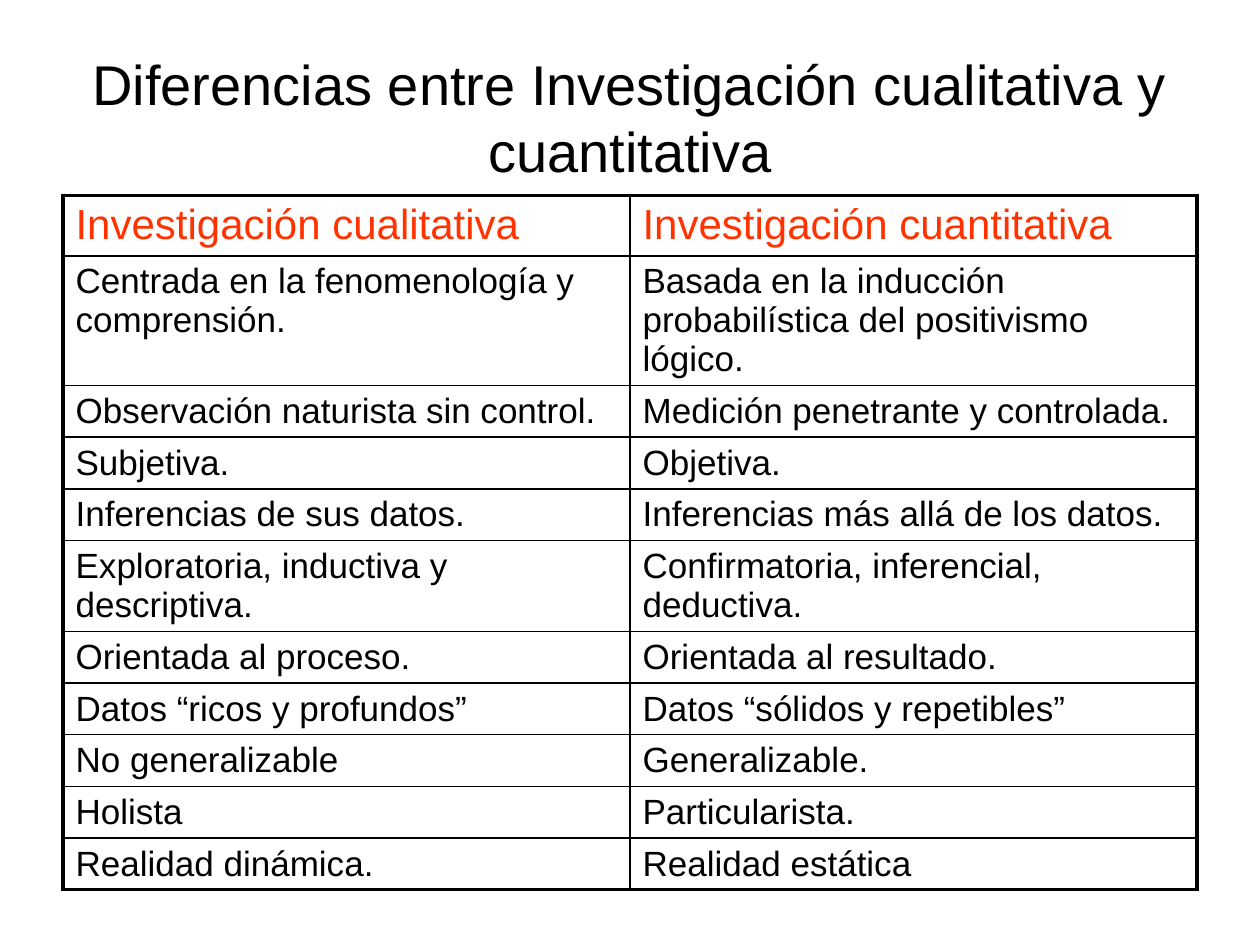
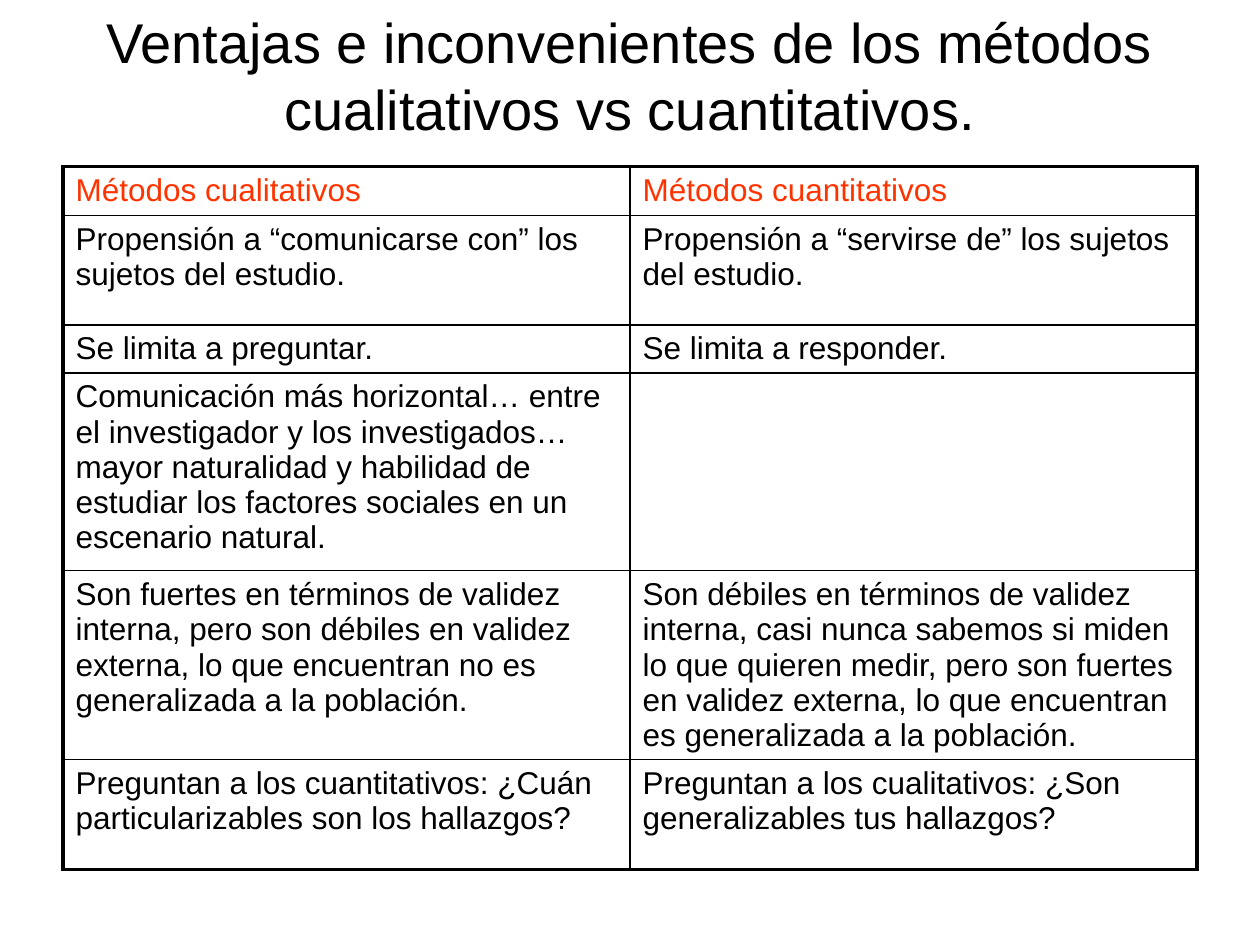
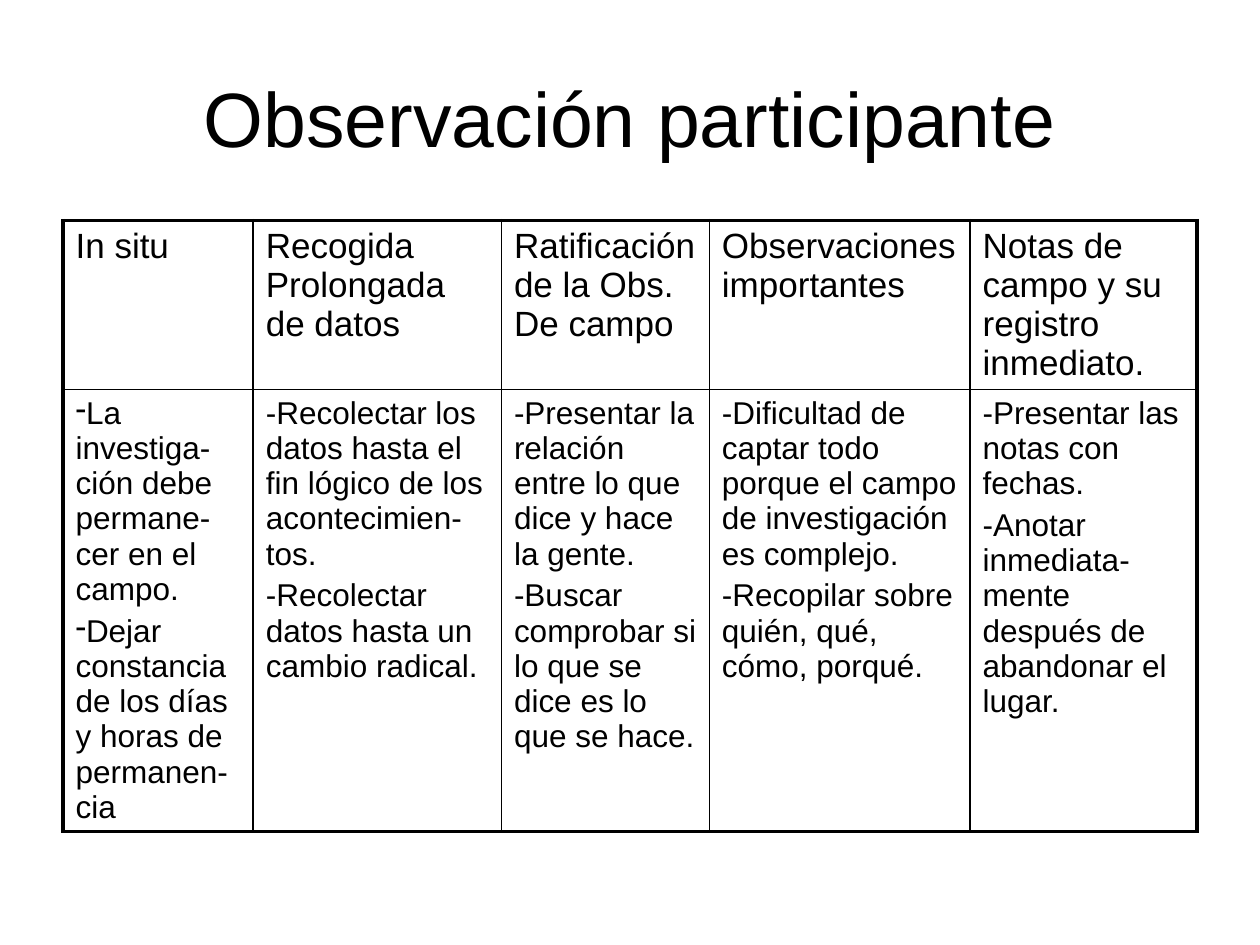
import pptx
import pptx.dml.color
import pptx.enum.text
import pptx.oxml
import pptx.util
from dataclasses import dataclass
from lxml import etree
from pptx.oxml.ns import qn


@dataclass(frozen=True)
class Theme:
    font: str = "Arial"
    ink: str = "000000"
    accent: str = "FF3300"
    outer: float = 2.25
    inner: float = 1
    gap: float = 0.2      # space before a paragraph, share of its type size
    margin: float = 0.05  # side margin, share of the slide width
    band: float = 1.25    # title height, inches


THEME = Theme()
WIDE, HIGH = 10, 7.5
SPAN = WIDE * (1 - 2 * THEME.margin)
LEFT = WIDE * THEME.margin
BULLET = "•"  # marks a paragraph that takes a dash bullet

TRAITS = [
    ("Investigación cualitativa", "Investigación cuantitativa"),
    ("Centrada en la fenomenología y comprensión.",
     "Basada en la inducción probabilística del positivismo lógico."),
    ("Observación naturista sin control.", "Medición penetrante y controlada."),
    ("Subjetiva.", "Objetiva."),
    ("Inferencias de sus datos.", "Inferencias más allá de los datos."),
    ("Exploratoria, inductiva y descriptiva.",
     "Confirmatoria, inferencial, deductiva."),
    ("Orientada al proceso.", "Orientada al resultado."),
    ("Datos “ricos y profundos”", "Datos “sólidos y repetibles”"),
    ("No generalizable", "Generalizable."),
    ("Holista", "Particularista."),
    ("Realidad dinámica.", "Realidad estática"),
]

METHODS = [
    ("Métodos cualitativos", "Métodos cuantitativos"),
    ("Propensión a “comunicarse con” los sujetos del estudio.",
     "Propensión a “servirse de” los sujetos del estudio."),
    ("Se limita a preguntar.", "Se limita a responder."),
    ("Comunicación más horizontal… entre el investigador y los investigados… "
     "mayor naturalidad y habilidad de estudiar los factores sociales en un "
     "escenario natural.", ""),
    ("Son fuertes en términos de validez interna, pero son débiles en validez "
     "externa, lo que encuentran no es generalizada a la población.",
     "Son débiles en términos de validez interna, casi nunca sabemos si miden "
     "lo que quieren medir, pero son fuertes en validez externa, lo que "
     "encuentran es generalizada a la población."),
    ("Preguntan a los cuantitativos: ¿Cuán particularizables son los hallazgos?",
     "Preguntan a los cualitativos: ¿Son generalizables tus hallazgos?"),
]

FIELD = [
    ("In situ", "Recogida Prolongada de datos", "Ratificación de la Obs. De campo",
     "Observaciones importantes", "Notas de campo y su registro inmediato."),
    ("•La investiga-ción debe permane-cer en el campo.\n"
     "•Dejar constancia de los días y horas de permanen-cia",
     "-Recolectar los datos hasta el fin lógico de los acontecimien-tos.\n"
     "-Recolectar datos hasta un cambio radical.",
     "-Presentar la relación entre lo que dice y hace la gente.\n"
     "-Buscar comprobar si lo que se dice es lo que se hace.",
     "-Dificultad de captar todo porque el campo de investigación es complejo.\n"
     "-Recopilar sobre quién, qué, cómo, porqué.",
     "-Presentar las notas con fechas.\n"
     "-Anotar inmediata-mente después de abandonar el lugar."),
]


def inch(size):
    return pptx.util.Inches(size)


def write(para, text, size, color):
    """Add one formatted run to a paragraph."""
    run = para.add_run()
    run.text = text
    run.font.name = THEME.font
    run.font.size = pptx.util.Pt(size)
    run.font.color.rgb = pptx.dml.color.RGBColor.from_string(color)


def dash(para):
    """Give a paragraph a dash bullet without indent."""
    props = para._p.get_or_add_pPr()
    props.set("marL", "0")
    props.set("indent", "0")
    etree.SubElement(props, qn("a:buFontTx"))
    etree.SubElement(props, qn("a:buChar")).set("char", "-")


def rule(cell, edges):
    """Draw the cell borders; edges maps a side to a width in points."""
    props = cell._tc.get_or_add_tcPr()
    for spot, side in enumerate("LRTB"):
        line = etree.Element(qn(f"a:ln{side}"))
        line.set("w", str(int(pptx.util.Pt(edges[side]))))
        fill = etree.SubElement(line, qn("a:solidFill"))
        etree.SubElement(fill, qn("a:srgbClr")).set("val", THEME.ink)
        props.insert(spot, line)


def fill_cell(cell, text, size, color):
    """Write the paragraphs of one cell."""
    cell.fill.background()
    frame = cell.text_frame
    for spot, part in enumerate(text.split("\n") if text else []):
        para = frame.add_paragraph() if spot else frame.paragraphs[0]
        para.space_before = pptx.util.Pt(size * THEME.gap)
        if part.startswith(BULLET):
            dash(para)
        write(para, part.removeprefix(BULLET), size, color)


def add_page(deck, text, size, top):
    """Add a slide with its title."""
    page = deck.slides.add_slide(deck.slide_layouts[5])
    title = page.shapes.title
    title.left, title.top = inch(LEFT), inch(top)
    title.width, title.height = inch(SPAN), inch(THEME.band)
    frame = title.text_frame
    frame.auto_size = pptx.enum.text.MSO_AUTO_SIZE.NONE
    frame.vertical_anchor = pptx.enum.text.MSO_ANCHOR.MIDDLE
    para = frame.paragraphs[0]
    para.alignment = pptx.enum.text.PP_ALIGN.CENTER
    write(para, text, size, THEME.ink)
    return page


def add_grid(page, data, top, cols, rows, head, body, tint):
    """Add a ruled table: cols and rows in inches, head row in its own style."""
    frame = page.shapes.add_table(len(rows), len(cols), inch(LEFT), inch(top),
                                  inch(sum(cols)), inch(sum(rows)))
    table = frame.table
    table.first_row = table.horz_banding = False
    for col, width in zip(table.columns, cols):
        col.width = inch(width)
    for row, height in zip(table.rows, rows):
        row.height = inch(height)
    last, end = len(rows) - 1, len(cols) - 1
    for r, texts in enumerate(data):
        size, color = (body, THEME.ink) if r else (head, tint)
        for c, text in enumerate(texts):
            cell = table.cell(r, c)
            fill_cell(cell, text, size, color)
            rim = {"L": c == 0, "R": c == end, "T": r == 0, "B": r == last}
            rule(cell, {side: THEME.outer if out else THEME.inner
                        for side, out in rim.items()})


def main():
    deck = pptx.Presentation()
    deck.slide_width, deck.slide_height = inch(WIDE), inch(HIGH)
    halves = [SPAN / 2] * 2

    # Qualitative against quantitative research
    page = add_page(deck, "Diferencias entre Investigación cualitativa y cuantitativa",
                    32, 0.3)
    rows = [0.48, 1.03] + [0.41] * 3 + [0.71] + [0.41] * 5
    add_grid(page, TRAITS, 1.55, halves, rows, 24, 20, THEME.accent)

    # Strengths and limits of the methods
    page = add_page(deck, "Ventajas e inconvenientes de los métodos cualitativos "
                    "vs cuantitativos.", 32, -0.03)
    rows = [0.39, 0.87, 0.38, 1.57, 1.5, 0.87]
    add_grid(page, METHODS, 1.32, halves, rows, 18, 18, THEME.accent)

    # Participant observation
    page = add_page(deck, "Observación participante", 44, 0.3)
    cols = [1.51, 1.97, 1.65, 2.07, 1.8]
    add_grid(page, FIELD, 1.75, cols, [1.34, 3.5], 20, 18, THEME.ink)

    deck.save("out.pptx")


if __name__ == "__main__":
    main()
